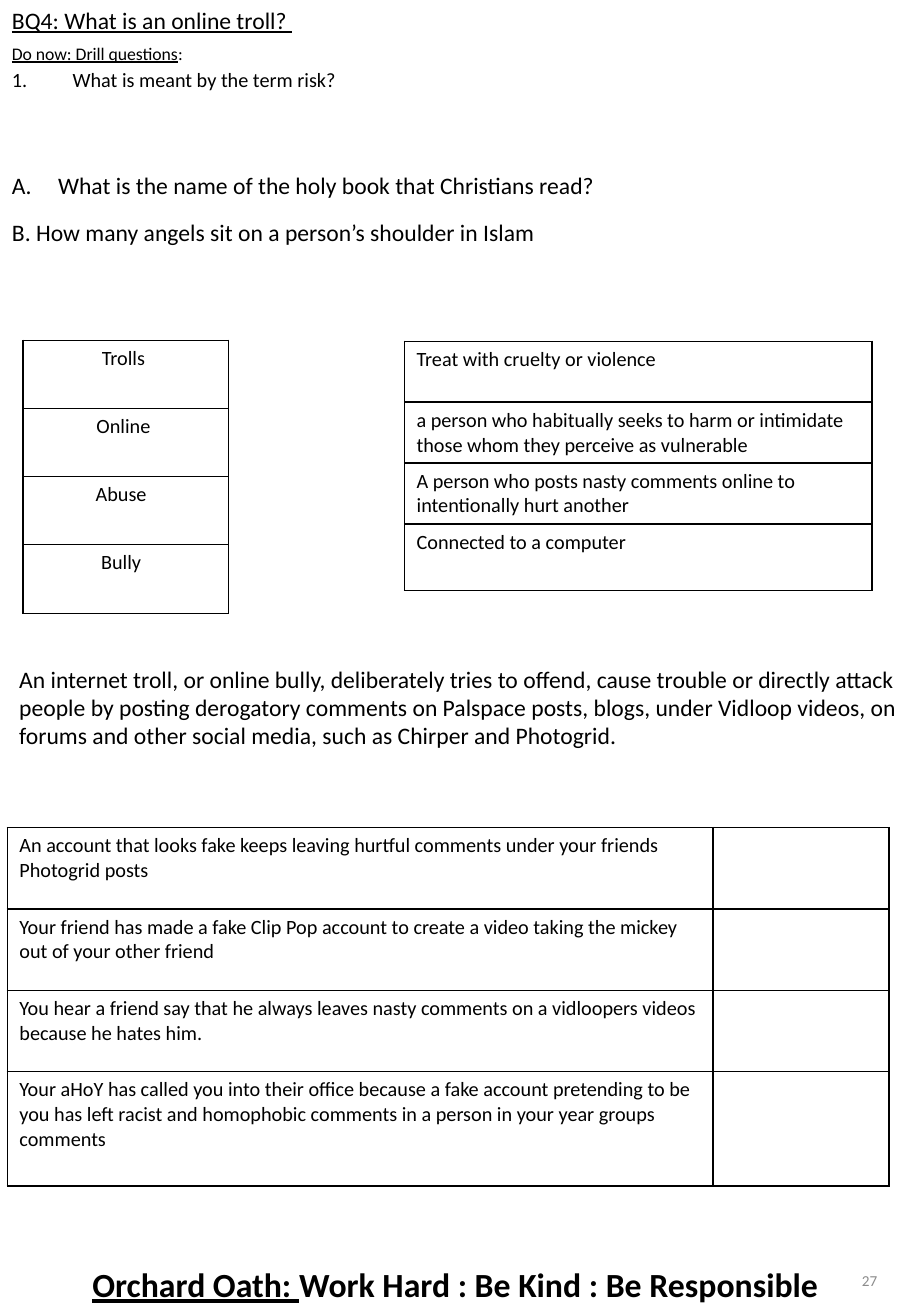
"""Build the worksheet page about online trolls."""
from lxml.etree import SubElement
from pptx import Presentation
from pptx.dml.color import RGBColor
from pptx.enum.text import MSO_ANCHOR, PP_ALIGN
from pptx.oxml.ns import qn
from pptx.util import Pt

PX = 9144
PAGE_WIDTH, PAGE_HEIGHT = 750, 1083
FONT = "Calibri"
COLORS = {"ink": "000000", "muted": "8C8C8C"}
LEFT, CENTER, RIGHT = PP_ALIGN.LEFT, PP_ALIGN.CENTER, PP_ALIGN.RIGHT

TEXTS = [
    {"place": (0, 1039, 750, 44), "lines": [
        {"spans": [("Orchard Oath: ", True), ("Work Hard : Be Kind : Be Responsible", False)],
         "size": 20, "bold": True, "align": CENTER, "spacing": 0.9}]},
    {"place": (563, 1025, 169, 58), "anchor": MSO_ANCHOR.MIDDLE, "lines": [
        {"spans": [("27", False)], "size": 9, "color": "muted", "align": RIGHT}]},
    {"place": (0, 0, 718, 34), "lines": [
        {"spans": [("BQ4: What is an online troll? ", True)], "size": 14}]},
    {"place": (0, 30, 750, 242), "lines": [
        {"spans": [("Do now: Drill questions", True), (":", False)], "size": 10.5},
        {"spans": [("What is meant by the term risk?", False)], "size": 12,
         "before": 2, "number": ("arabicPeriod", 50)},
        {"spans": [("What is the name of the holy book that Christians read?", False)],
         "size": 14, "before": 47, "number": ("alphaUcPeriod", 38)},
        {"spans": [("B. How many angels sit on a person’s shoulder in Islam", False)],
         "size": 14, "before": 11}]},
    {"place": (6, 542, 750, 104), "lines": [
        {"spans": [("An internet troll, or online bully, deliberately tries to offend, cause trouble "
                    "or directly attack people by posting derogatory comments on Palspace posts, "
                    "blogs, under Vidloop videos, on forums and other social media, such as "
                    "Chirper and Photogrid.", False)], "size": 14}]},
]

TABLES = [
    {"corner": (19, 280), "widths": [169], "heights": [56, 56, 56, 57], "align": CENTER,
     "rows": [["Trolls "], ["Online "], ["Abuse  "], ["Bully  "]]},
    {"corner": (333, 281), "widths": [385], "heights": [50, 50, 50, 55], "align": LEFT,
     "rows": [["Treat with cruelty or violence"],
              ["a person who habitually seeks to harm or intimidate those "
               "whom they perceive as vulnerable"],
              ["A person who posts nasty comments online to intentionally hurt another"],
              ["Connected to a computer"]]},
    {"corner": (6, 681), "widths": [581, 145], "heights": [67, 67, 67, 94], "align": LEFT,
     "rows": [["An account that looks fake keeps leaving hurtful comments under your friends "
               "Photogrid posts", ""],
              ["Your friend has made a fake Clip Pop account to create a video taking the "
               "mickey out of your other friend", ""],
              ["You hear a friend say that he always leaves nasty comments on a vidloopers "
               "videos because he hates him.", ""],
              ["Your aHoY has called you into their office because a fake account pretending to "
               "be you has left racist and homophobic comments in a person in your year groups "
               "comments", ""]]},
]


def style(para, size, color="ink", bold=False, align=LEFT):
    para.alignment = align
    para.font.name = FONT
    para.font.size = Pt(size)
    para.font.bold = bold
    para.font.color.rgb = RGBColor.from_string(COLORS[color])


def add_number(para, scheme, indent):
    props = para._p.get_or_add_pPr()
    props.set("marL", str(indent * PX))
    props.set("indent", str(-indent * PX))
    SubElement(props, qn("a:buAutoNum"), type=scheme)


def add_text(page, place, lines, anchor=MSO_ANCHOR.TOP):
    frame = page.shapes.add_textbox(*(length * PX for length in place)).text_frame
    frame.word_wrap = True
    frame.vertical_anchor = anchor
    for index, line in enumerate(lines):
        para = frame.add_paragraph() if index else frame.paragraphs[0]
        if "number" in line:
            add_number(para, *line["number"])
        style(para, line["size"], line.get("color", "ink"),
              line.get("bold", False), line.get("align", LEFT))
        if "before" in line:
            para.space_before = Pt(line["before"])
        if "spacing" in line:
            para.line_spacing = line["spacing"]
        for text, underlined in line["spans"]:
            span = para.add_run()
            span.text = text
            span.font.underline = underlined


def add_borders(cell):
    props = cell._tc.get_or_add_tcPr()
    for side in ("lnL", "lnR", "lnT", "lnB"):
        border = SubElement(props, qn(f"a:{side}"), w=str(Pt(1)))
        fill = SubElement(border, qn("a:solidFill"))
        SubElement(fill, qn("a:srgbClr"), val=COLORS["ink"])


def add_grid(page, corner, widths, heights, align, rows):
    lengths = (*corner, sum(widths), sum(heights))
    table = page.shapes.add_table(len(rows), len(widths), *(n * PX for n in lengths)).table
    table.first_row = table.horz_banding = False
    for column, width in zip(table.columns, widths):
        column.width = width * PX
    for row, height, texts in zip(table.rows, heights, rows):
        row.height = height * PX
        for cell, text in zip(row.cells, texts):
            add_borders(cell)
            cell.fill.background()
            cell.text = text
            style(cell.text_frame.paragraphs[0], 12, align=align)


def main():
    deck = Presentation()
    deck.slide_width, deck.slide_height = PAGE_WIDTH * PX, PAGE_HEIGHT * PX
    page = deck.slides.add_slide(deck.slide_layouts[6])
    for text in TEXTS:
        add_text(page, **text)
    for table in TABLES:
        add_grid(page, **table)
    deck.save("out.pptx")


if __name__ == "__main__":
    main()
